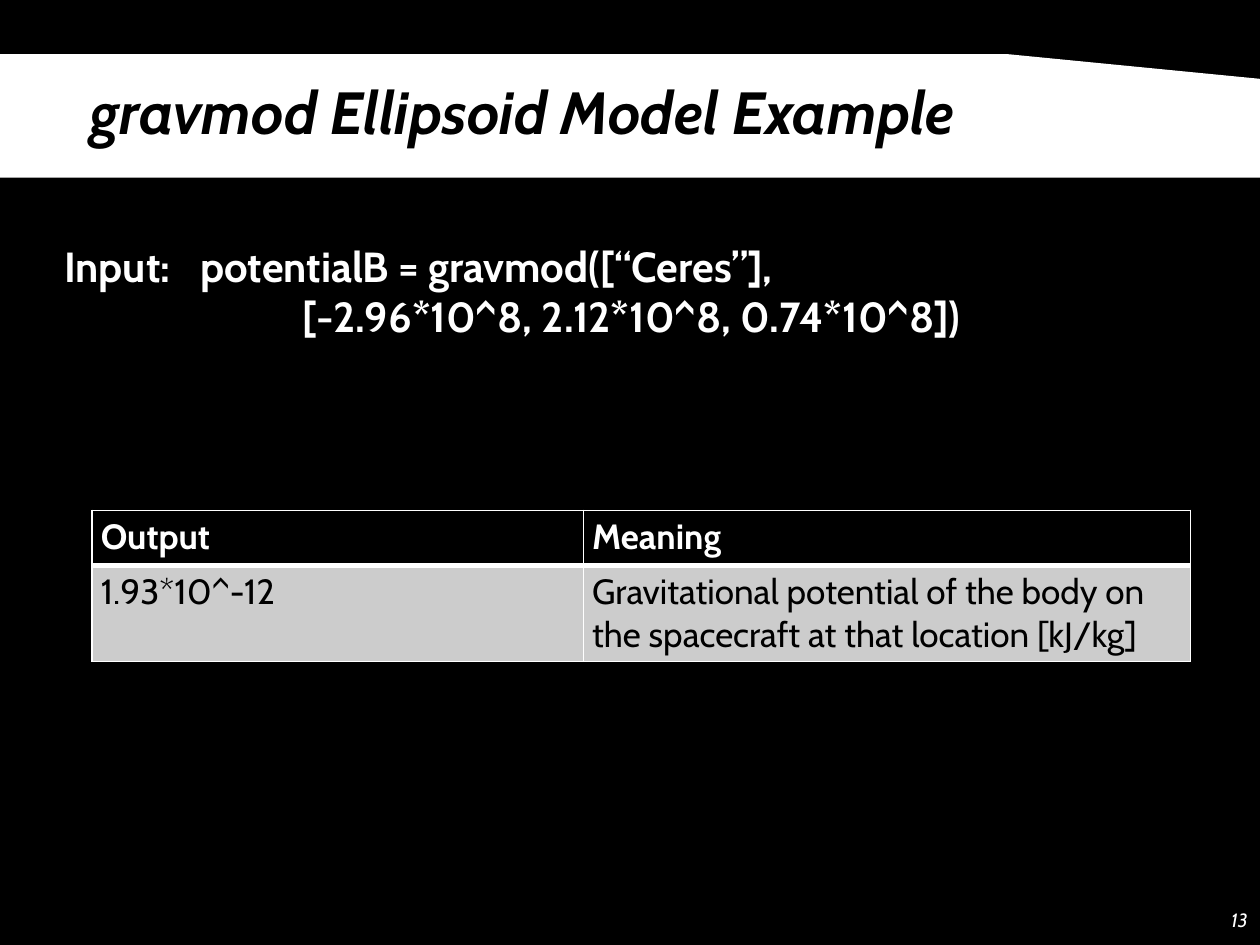
from lxml import etree
from pptx import Presentation
from pptx.dml.color import RGBColor
from pptx.enum.shapes import MSO_SHAPE
from pptx.enum.text import MSO_ANCHOR, PP_ALIGN
from pptx.oxml.ns import qn
from pptx.util import Inches, Pt

CARD = MSO_SHAPE.FLOWCHART_CARD
TOP, MIDDLE = MSO_ANCHOR.TOP, MSO_ANCHOR.MIDDLE
LEFT, RIGHT = PP_ALIGN.LEFT, PP_ALIGN.RIGHT
FONT = "Cabin"
BLACK, WHITE, GREY = "000000", "FFFFFF", "CCCCCC"


def rgb(value):
    return RGBColor.from_string(value)


def set_font(paragraph, size, color, bold=False, italic=False):
    font = paragraph.font
    font.name, font.size = FONT, Pt(size)
    font.bold, font.italic = bold, italic
    font.color.rgb = rgb(color)


def add_text(slide, box, lines, size, color, bold=False, italic=False,
             align=LEFT, anchor=TOP):
    frame = slide.shapes.add_textbox(*map(Inches, box)).text_frame
    frame.word_wrap = True
    frame.vertical_anchor = anchor
    for i, line in enumerate(lines):
        paragraph = frame.add_paragraph() if i else frame.paragraphs[0]
        paragraph.text = line
        paragraph.alignment = align
        set_font(paragraph, size, color, bold, italic)
    return frame


def add_title(slide, band_box, title_box):
    # White band with a cut top right corner
    band = slide.shapes.add_shape(CARD, *map(Inches, band_box))
    band.shadow.inherit = False
    band.fill.solid()
    band.fill.fore_color.rgb = rgb(WHITE)
    band.line.fill.background()
    band._element.spPr.find(qn("a:xfrm")).set("flipH", "1")

    title = add_text(slide, title_box, ["gravmod Ellipsoid Model Example"],
                     34, BLACK, bold=True, italic=True)
    title.paragraphs[0].line_spacing = 0.9


def add_input(slide, box):
    frame = add_text(slide, box,
                     ["Input:\tpotentialB = gravmod([“Ceres”],",
                      "[-2.96*10^8, 2.12*10^8, 0.74*10^8])"],
                     24, WHITE, bold=True)
    frame.margin_left = Inches(0.31)
    call, position = (p._p.get_or_add_pPr() for p in frame.paragraphs)
    # Tab stop for the call, indent for its second argument
    tabs = etree.Element(qn("a:tabLst"))
    etree.SubElement(tabs, qn("a:tab"), pos=str(Inches(1.08)), algn="l")
    call.find(qn("a:defRPr")).addprevious(tabs)
    position.set("marL", str(Inches(1.89)))
    position.set("indent", "0")


def set_borders(cell, widths):
    properties = cell._tc.get_or_add_tcPr()
    for i, (side, width) in enumerate(widths.items()):
        line = etree.Element(qn(f"a:ln{side}"), w=str(Pt(width)))
        fill = etree.SubElement(line, qn("a:solidFill"))
        etree.SubElement(fill, qn("a:srgbClr"), val=WHITE)
        properties.insert(i, line)


def add_output_table(slide, box):
    rows = [
        ["Output", "Meaning"],
        ["1.93*10^-12", "Gravitational potential of the body on "
                        "the spacecraft at that location [kJ/kg]"],
    ]
    table = slide.shapes.add_table(2, 2, *map(Inches, box)).table
    for column, width in zip(table.columns, (3.9, 4.82)):
        column.width = Inches(width)
    for row, height in zip(table.rows, (0.44, 0.76)):
        row.height = Inches(height)

    for r, texts in enumerate(rows):
        header = r == 0
        for c, text in enumerate(texts):
            cell = table.cell(r, c)
            cell.text = text
            cell.margin_left = cell.margin_right = Inches(0.07)
            cell.margin_top = cell.margin_bottom = Inches(0.04)
            cell.fill.solid()
            cell.fill.fore_color.rgb = rgb(BLACK if header else GREY)
            set_font(cell.text_frame.paragraphs[0], 20,
                     WHITE if header else BLACK, bold=header)
            set_borders(cell, {"L": 1, "R": 1, "T": 1 if header else 3,
                               "B": 3 if header else 1})


def main():
    prs = Presentation()
    prs.slide_width, prs.slide_height = Inches(10), Inches(7.5)
    slide = prs.slides.add_slide(prs.slide_layouts[6])
    slide.background.fill.solid()
    slide.background.fill.fore_color.rgb = rgb(BLACK)

    add_title(slide, (0, 0.43, 10, 0.98), (0.62, 0.61, 8.93, 0.98))
    add_input(slide, (0.2, 1.86, 9.63, 1.31))
    add_output_table(slide, (0.73, 4.05, 8.72, 1.2))
    # Slide number
    add_text(slide, (9.55, 7.1, 0.45, 0.4), ["13"], 11, WHITE,
             italic=True, align=RIGHT, anchor=MIDDLE)
    prs.save("out.pptx")


if __name__ == "__main__":
    main()
